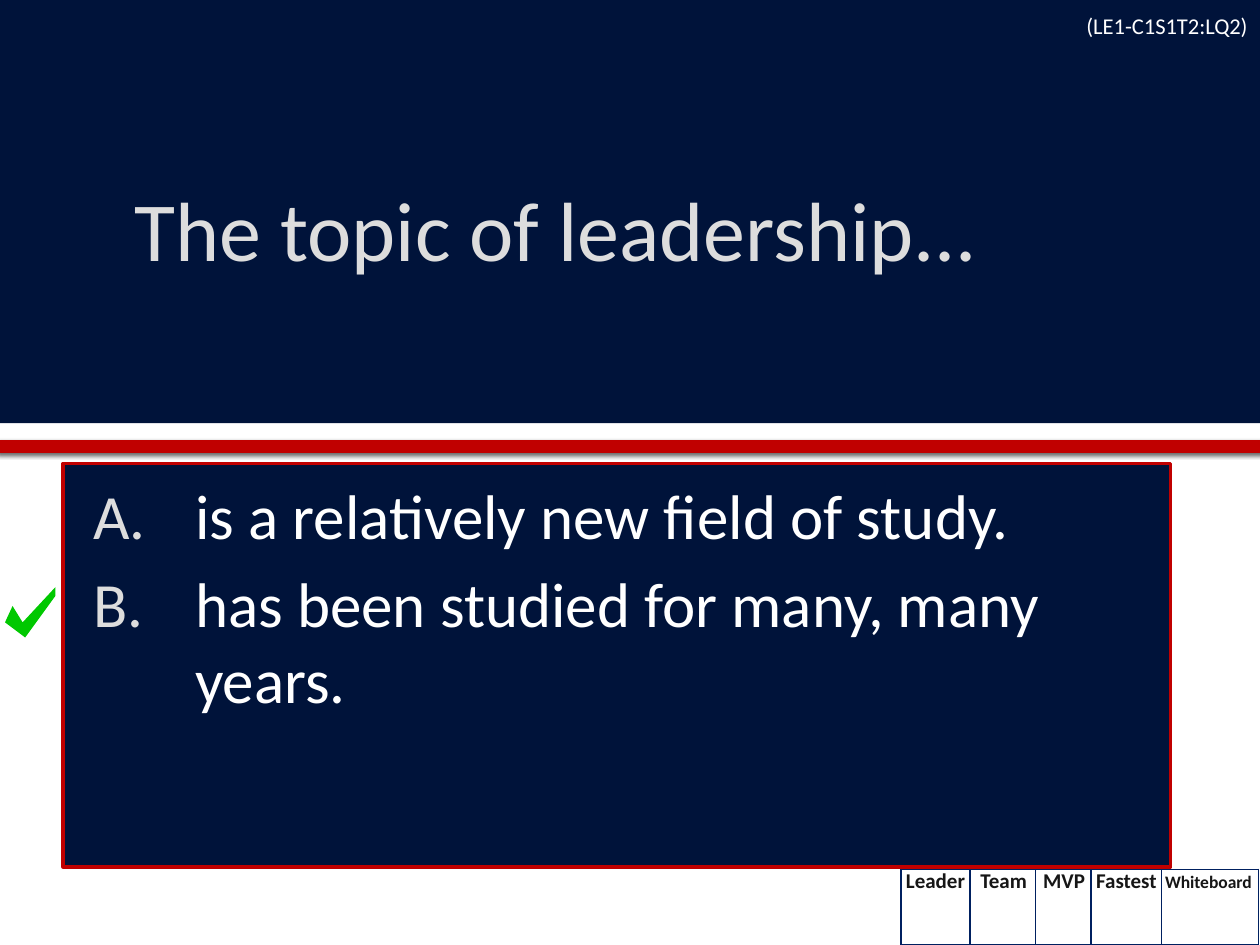
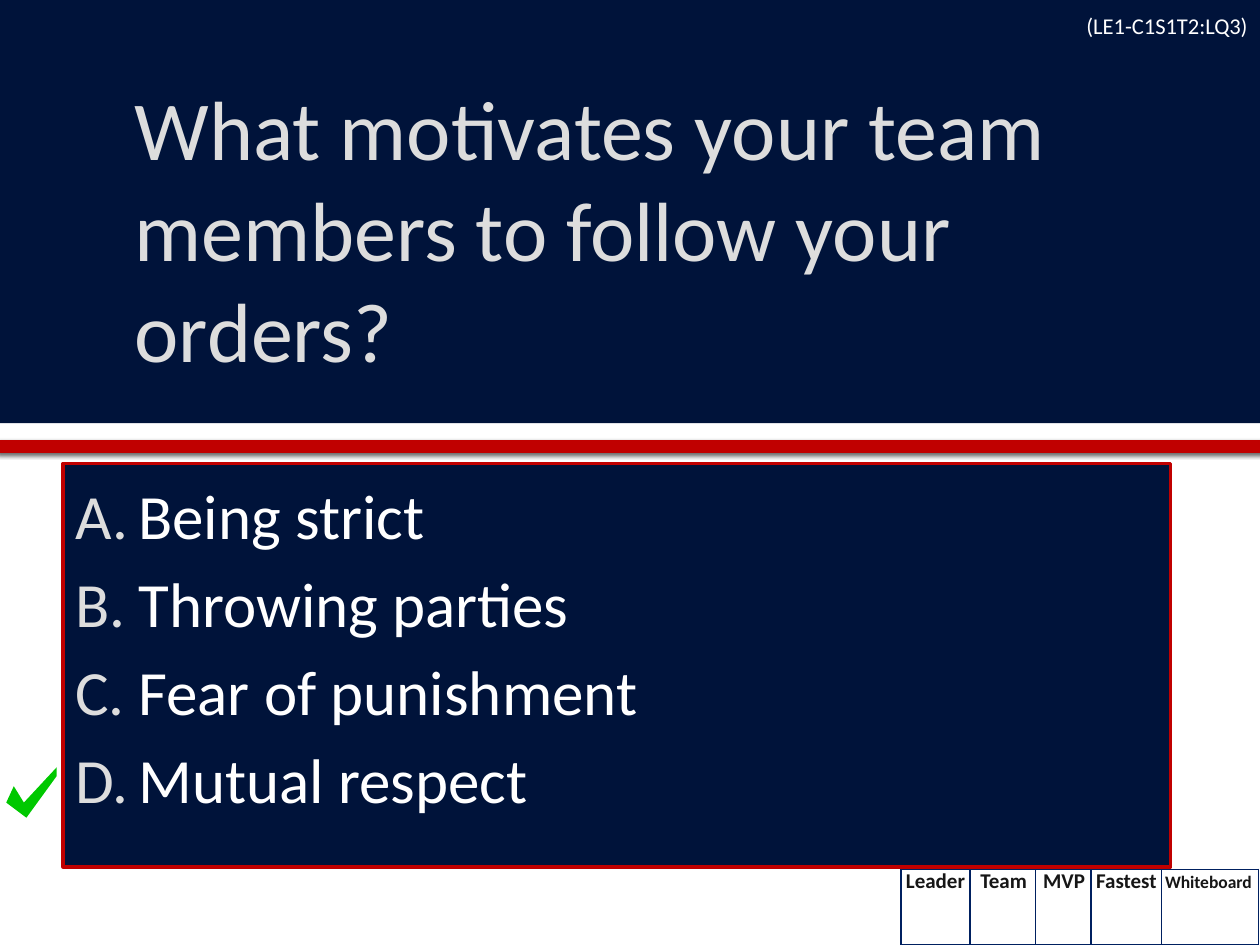
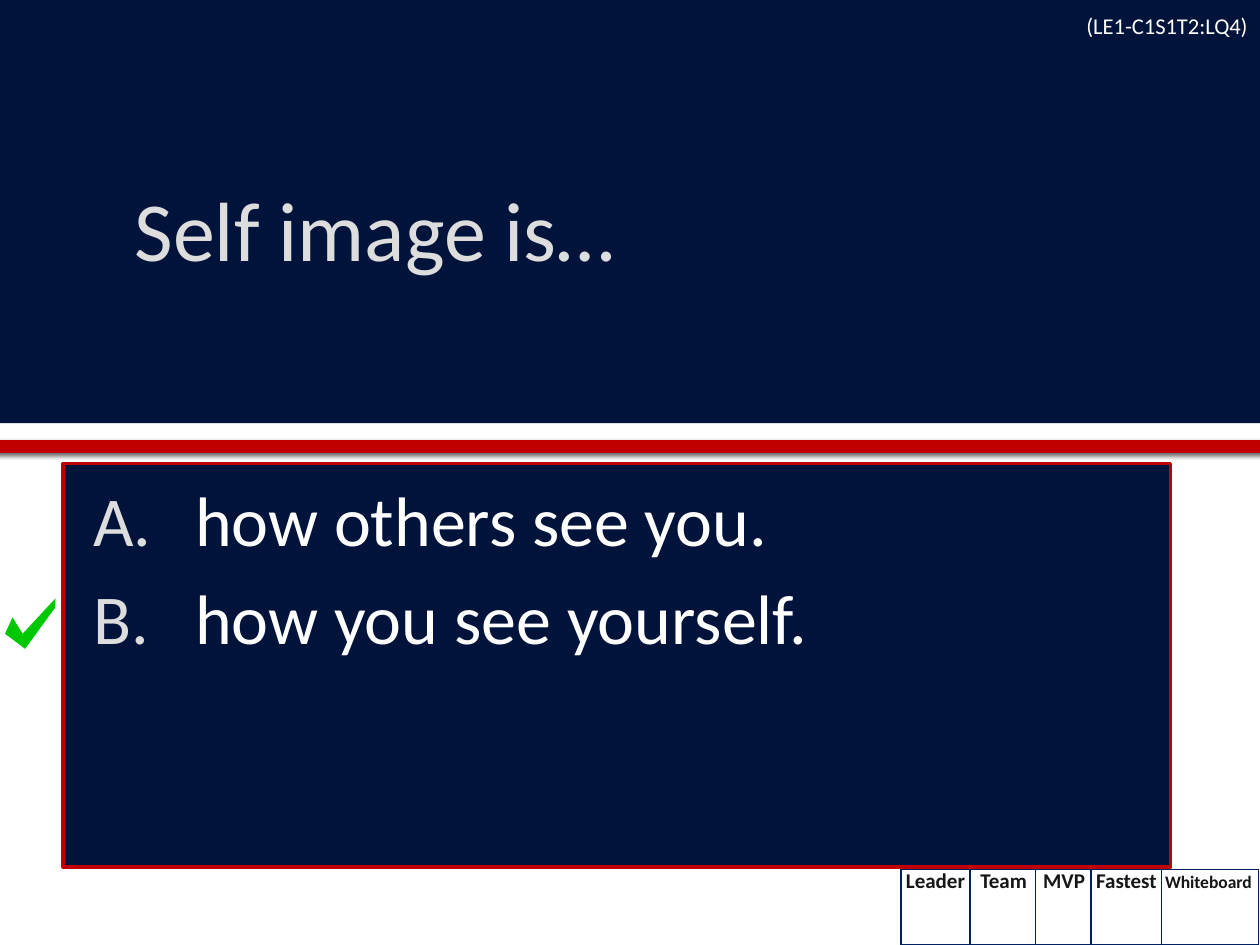
from lxml.etree import SubElement
from pptx import Presentation
from pptx.dml.color import RGBColor
from pptx.enum.shapes import MSO_SHAPE
from pptx.enum.text import MSO_ANCHOR, PP_ALIGN
from pptx.oxml.ns import qn
from pptx.util import Inches, Pt

FONT = "Calibri"
COLORS = {
    "navy": "00133A", "red": "C00000", "white": "FFFFFF", "silver": "DDDDDD",
    "ink": "161616", "border": "002060", "check": "00C800", "shadow": "000000",
}

# check: left and top of the mark beside the right answer
QUESTIONS = [
    {"code": "(LE1-C1S1T2:LQ2)", "title": "The topic of leadership...",
     "answers": ["is a relatively new field of study.",
                 "has been studied for many, many years."],
     "size": 36, "indent": (0.95, -0.81), "check": (0.04, 4.66)},
    {"code": "(LE1-C1S1T2:LQ3)",
     "title": "What motivates your team members to follow your orders?",
     "answers": ["Being strict", "Throwing parties", "Fear of punishment", "Mutual respect"],
     "size": 36, "indent": (0.5, -0.5), "check": (0.05, 6.09)},
    {"code": "(LE1-C1S1T2:LQ4)", "title": "Self image is…",
     "answers": ["how others see you.", "how you see yourself."],
     "size": 40, "indent": (0.95, -0.81), "check": (0.04, 4.75)},
]

SCORE_COLUMNS = [0.55, 0.52, 0.44, 0.56, 0.77]
# label, left, top, width, height, size
SCORE_LABELS = [
    ("Leader", 7.09, 6.84, 0.67, 0.3, 12),
    ("Team", 7.63, 6.84, 0.67, 0.3, 12),
    ("MVP", 8.11, 6.84, 0.67, 0.3, 12),
    ("Fastest", 8.58, 6.84, 0.72, 0.3, 12),
    ("Whiteboard", 9.13, 6.86, 0.92, 0.27, 10),
]
CHECK_POINTS = [(0.06, 0.15), (0, 0.28), (0.16, 0.4), (0.4, 0.07), (0.4, 0), (0.14, 0.28)]


def rgb(name):
    return RGBColor.from_string(COLORS[name])


def paint(shape, fill, line=None, width=0):
    shape.shadow.inherit = False
    shape.fill.solid()
    shape.fill.fore_color.rgb = rgb(fill)
    if line:
        shape.line.color.rgb = rgb(line)
        shape.line.width = Pt(width)
    else:
        shape.line.fill.background()


def add_panel(slide, place, fill, line=None, width=0):
    panel = slide.shapes.add_shape(MSO_SHAPE.RECTANGLE, *map(Inches, place))
    paint(panel, fill, line, width)
    return panel


def add_color(parent, name):
    return SubElement(parent, qn("a:srgbClr"), val=COLORS[name])


def write(shape, lines, size, color, margins, anchor=MSO_ANCHOR.TOP,
          align=PP_ALIGN.LEFT, bold=False, wrap=True):
    """Fill a shape with paragraphs; margins are left, top, right, bottom in inches."""
    frame = shape.text_frame
    frame.word_wrap = wrap
    frame.vertical_anchor = anchor
    (frame.margin_left, frame.margin_top,
     frame.margin_right, frame.margin_bottom) = map(Inches, margins)
    frame.text = "\n".join(lines)
    for para in frame.paragraphs:
        para.alignment = align
        for span in para.runs:
            span.font.name = FONT
            span.font.size = Pt(size)
            span.font.bold = bold
            span.font.color.rgb = rgb(color)
    return frame


def add_letters(frame, indent, gap):
    """Letter the paragraphs A., B., C. with a hanging indent."""
    left, hanging = indent
    for index, para in enumerate(frame.paragraphs):
        properties = para._p.get_or_add_pPr()
        properties.set("marL", str(Inches(left)))
        properties.set("indent", str(Inches(hanging)))
        add_color(SubElement(properties, qn("a:buClr")), "silver")
        SubElement(properties, qn("a:buFont"), typeface=FONT)
        SubElement(properties, qn("a:buAutoNum"), type="alphaUcPeriod")
        if index:
            para.space_before = Pt(gap)


def add_bands(slide):
    add_panel(slide, (0, 0, 10, 3.36), "navy")
    stripe = add_panel(slide, (0, 3.52, 10, 0.05), "red", "red", 4)
    effects = stripe._element.spPr.find(qn("a:effectLst"))
    shadow = SubElement(effects, qn("a:outerShdw"), blurRad=str(Pt(2.5)),
                        dist=str(Pt(0.8)), dir="5400000", rotWithShape="0")
    SubElement(add_color(shadow, "shadow"), qn("a:alpha"), val="60000")


def add_scoreboard(slide):
    table = slide.shapes.add_table(1, len(SCORE_COLUMNS), Inches(7.15), Inches(6.9),
                                   Inches(sum(SCORE_COLUMNS)), Inches(0.6)).table
    table.first_row = table.horz_banding = False
    for column, width in zip(table.columns, SCORE_COLUMNS):
        column.width = Inches(width)
    for cell in table.iter_cells():
        properties = cell._tc.get_or_add_tcPr()
        for side in ("lnL", "lnR", "lnT", "lnB"):
            border = SubElement(properties, qn(f"a:{side}"), w=str(Pt(1)))
            add_color(SubElement(border, qn("a:solidFill")), "border")
        cell.fill.background()
    for label, left, top, width, height, size in SCORE_LABELS:
        box = slide.shapes.add_textbox(*map(Inches, (left, top, width, height)))
        write(box, [label], size, "ink", (0.1, 0.05, 0.1, 0.05),
              align=PP_ALIGN.CENTER, bold=True, wrap=False)


def add_check(slide, left, top):
    points = [(Inches(left + x), Inches(top + y)) for x, y in CHECK_POINTS]
    builder = slide.shapes.build_freeform(*points[0])
    builder.add_line_segments(points[1:], close=True)
    paint(builder.convert_to_shape(), "check")


def add_question(slide, question):
    code = slide.shapes.add_textbox(*map(Inches, (7.25, 0.01, 2.75, 0.33)))
    write(code, [question["code"]], 12.9, "white", (0.06, 0.1, 0.1, 0.05),
          MSO_ANCHOR.MIDDLE, PP_ALIGN.RIGHT)
    title = add_panel(slide, (0.97, 0.38, 8.71, 2.86), "navy")
    write(title, [question["title"]], 48, "silver", (0.1, 0.05, 0.05, 0.05), MSO_ANCHOR.MIDDLE)
    answers = add_panel(slide, (0.5, 3.68, 8.79, 3.2), "navy", "red", 2)
    frame = write(answers, question["answers"], question["size"], "white",
                  (0.1, 0.1, 0.1, 0.05))
    add_letters(frame, question["indent"], question["size"] * 0.2)
    add_check(slide, *question["check"])


def main():
    deck = Presentation()
    deck.slide_width, deck.slide_height = Inches(10), Inches(7.5)
    for question in QUESTIONS:
        slide = deck.slides.add_slide(deck.slide_layouts[6])
        add_bands(slide)
        add_scoreboard(slide)
        add_question(slide, question)
    deck.save("out.pptx")


if __name__ == "__main__":
    main()
